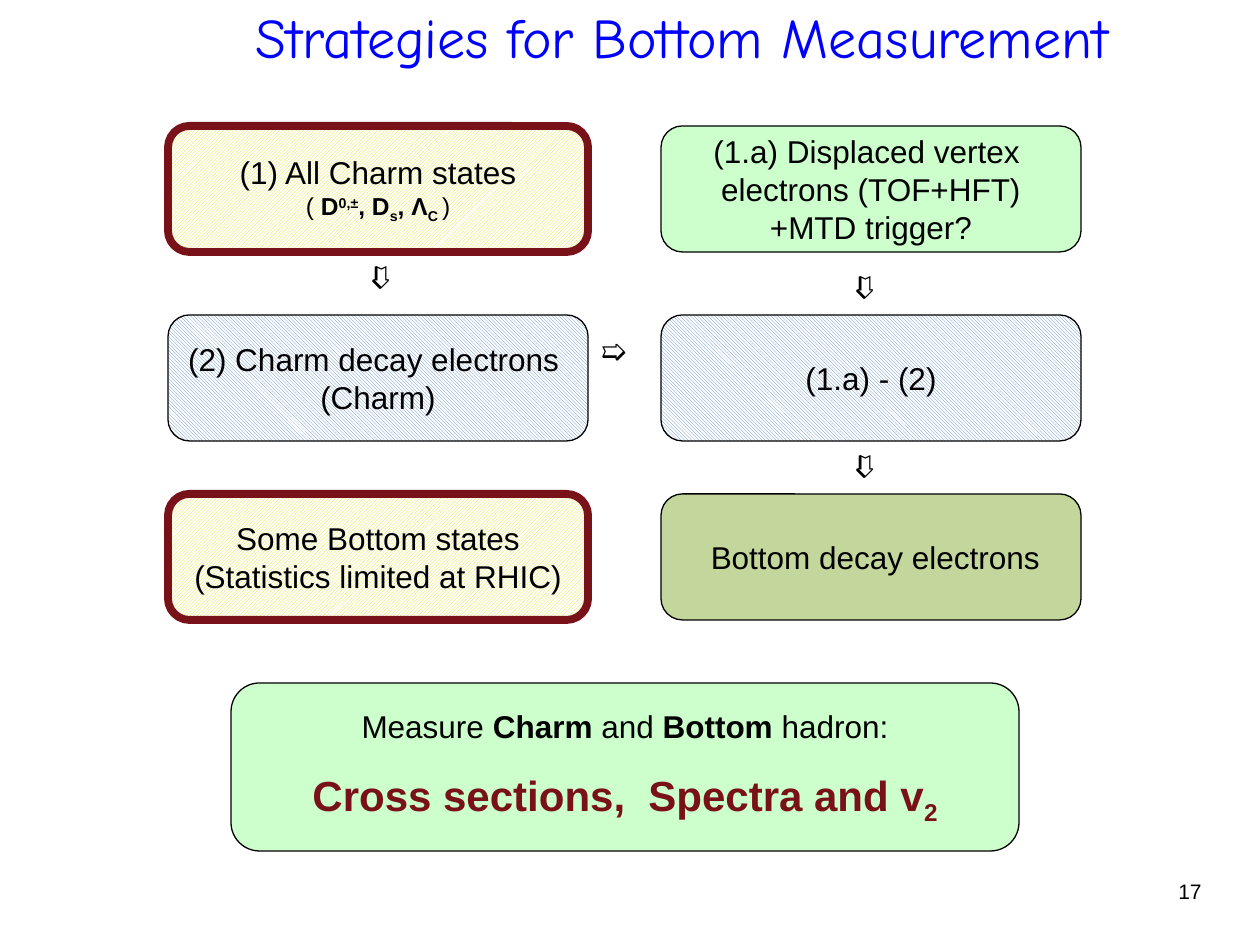
from pptx import Presentation
from pptx.dml.color import RGBColor
from pptx.enum.dml import MSO_PATTERN
from pptx.enum.shapes import MSO_SHAPE
from pptx.enum.text import MSO_ANCHOR, MSO_AUTO_SIZE, PP_ALIGN
from pptx.util import Emu, Pt

ROUNDED = MSO_SHAPE.ROUNDED_RECTANGLE
UPWARD = MSO_PATTERN.LIGHT_UPWARD_DIAGONAL
DOWNWARD = MSO_PATTERN.LIGHT_DOWNWARD_DIAGONAL
MIDDLE = MSO_ANCHOR.MIDDLE
NO_FIT = MSO_AUTO_SIZE.NONE
CENTER, LEFT = PP_ALIGN.CENTER, PP_ALIGN.LEFT

EMU_PER_PX = 914400 / 126
BLACK, MAROON, GREEN = "000000", "791118", "CCFFCC"

# Style: fill colour or (pattern, foreground), line colour, line width
STYLES = {
    "states": ((UPWARD, "E3DF1C"), MAROON, 4.5),
    "electrons": ((DOWNWARD, "4F81BD"), BLACK, 0.75),
    "green": (GREEN, BLACK, 0.75),
    "olive": ("C3D69B", BLACK, 0.75),
}

# Line: size, colour, space before, runs of (text, bold, baseline percent)


def line(*runs, size=18, color=BLACK, before=0):
    return size, color, before, [(run, False, 0) if isinstance(run, str) else run for run in runs]


COLUMNS, ROWS = (168, 661), (126, 315, 494)
BOX_SIZE = (420, 126)
GRID = [
    [("states", [line("(1) All Charm states"),
                 line("( ", ("D", True, 0), ("0,±", True, 30), (", D", True, 0),
                      ("s", True, -25), (", Λ", True, 0), ("C ", True, -25), ")", size=14)]),
     ("green", [line("(1.a) Displaced vertex "), line("electrons (TOF+HFT)"),
                line("+MTD trigger?")])],
    [("electrons", [line("(2) Charm decay electrons "), line("(Charm)")]),
     ("electrons", [line("(1.a) - (2)")])],
    [("states", [line(" Some Bottom states "), line("(Statistics limited at RHIC)")]),
     ("olive", [line(" Bottom decay electrons")])],
]
SUMMARY = [
    line("Measure ", ("Charm", True, 0), " and ", ("Bottom", True, 0), " hadron:"),
    line(("Cross sections,  Spectra and v", True, 0), ("2", True, -25),
         size=24, color=MAROON, before=14),
]
ARROW_SIZE = (62, 63)
ARROWS = [(588, 325, 0), (346, 252, 90), (830, 262, 90), (830, 441, 90)]  # left, top, rotation


def px(*lengths):
    return [Emu(round(length * EMU_PER_PX)) for length in lengths]


def rgb(value):
    return RGBColor.from_string(value)


def write(frame, lines, align):
    for index, (size, color, before, runs) in enumerate(lines):
        para = frame.paragraphs[0] if index == 0 else frame.add_paragraph()
        para.alignment = align
        para.space_before = Pt(before)
        para.font.name, para.font.size = "Arial", Pt(size)
        para.font.color.rgb = rgb(color)
        for text, bold, baseline in runs:
            span = para.add_run()
            span.text = text
            span.font.bold = bold
            # Run properties override the theme's text colour for shapes
            span.font.name, span.font.size = "Arial", Pt(size)
            span.font.color.rgb = rgb(color)
            if baseline:
                span.font._element.set("baseline", str(baseline * 1000))


def add_box(slide, bounds, style, lines):
    fill, line_color, width = STYLES[style]
    box = slide.shapes.add_shape(ROUNDED, *px(*bounds))
    box.shadow.inherit = False
    box.adjustments[0] = 0.17
    if isinstance(fill, str):
        box.fill.solid()
        box.fill.fore_color.rgb = rgb(fill)
    else:
        box.fill.patterned()
        box.fill.pattern = fill[0]
        box.fill.fore_color.rgb = rgb(fill[1])
        box.fill.back_color.rgb = rgb("FFFFFF")
    box.line.color.rgb = rgb(line_color)
    box.line.width = Pt(width)
    box.text_frame.word_wrap = False
    box.text_frame.vertical_anchor = MIDDLE
    write(box.text_frame, lines, CENTER)


def add_label(slide, bounds, text, size, rotation=0):
    label = slide.shapes.add_textbox(*px(*bounds))
    label.rotation = rotation
    label.text_frame.word_wrap = False
    write(label.text_frame, [line(text, size=size)], LEFT)


def main():
    deck = Presentation()
    deck.slide_width, deck.slide_height = px(1260, 945)
    slide = deck.slides.add_slide(deck.slide_layouts[5])

    title = slide.shapes.title
    title.left, title.top, title.width, title.height = px(147, 0, 1071, 73)
    title.text_frame.text = "Strategies for Bottom Measurement"
    title.text_frame.auto_size = NO_FIT
    title.text_frame.vertical_anchor = MIDDLE
    para = title.text_frame.paragraphs[0]
    para.alignment = CENTER
    para.font.name, para.font.size = "Comic Neue", Pt(32)
    para.font.color.rgb = rgb("0000FF")

    for top, row in zip(ROWS, GRID):
        for left, (style, lines) in zip(COLUMNS, row):
            add_box(slide, (left, top, *BOX_SIZE), style, lines)
    add_box(slide, (231, 683, 788, 168), "green", SUMMARY)

    for left, top, rotation in ARROWS:
        add_label(slide, (left, top, *ARROW_SIZE), "➯", 18, rotation)
    add_label(slide, (1166, 872, 63, 50), "17", 12)

    deck.save("out.pptx")


if __name__ == "__main__":
    main()
